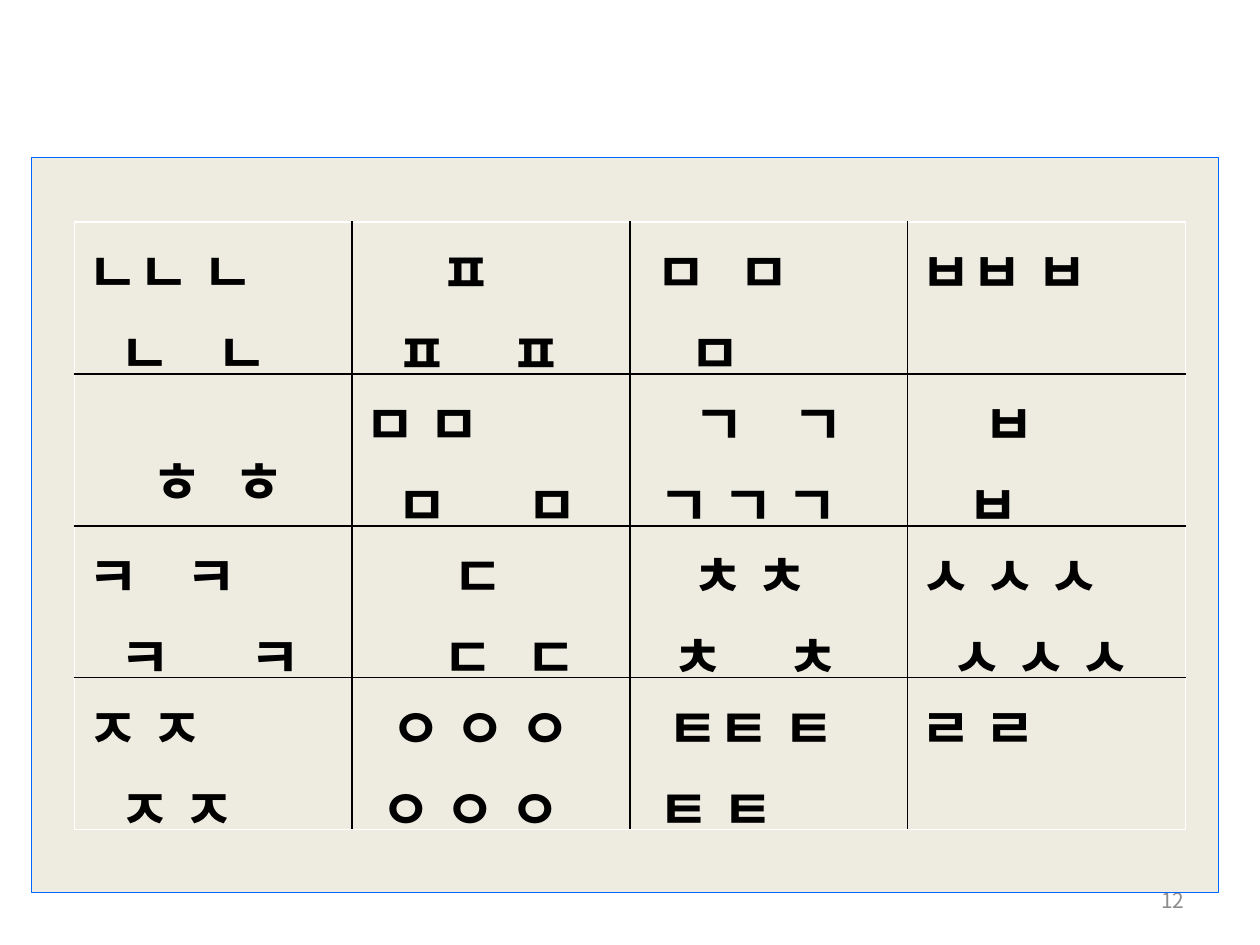
from dataclasses import dataclass

from lxml import etree
from pptx import Presentation
from pptx.dml.color import RGBColor
from pptx.enum.shapes import MSO_SHAPE
from pptx.enum.text import MSO_ANCHOR, PP_ALIGN
from pptx.oxml.ns import qn
from pptx.util import Cm, Pt

RECTANGLE = MSO_SHAPE.RECTANGLE
MIDDLE, TOP, BOTTOM = MSO_ANCHOR.MIDDLE, MSO_ANCHOR.TOP, MSO_ANCHOR.BOTTOM
RIGHT = PP_ALIGN.RIGHT

FONT = "Noto Sans CJK KR"
COLORS = {"panel": "EEECE1", "outline": "0066FF", "text": "000000",
          "grid": "000000", "number": "8C8C8C"}
COLUMN_WIDTH, ROW_HEIGHT = Cm(5.6), Cm(3.06)


@dataclass
class Line:
    """Letters on one line; each tab goes to the next stop (cm)."""
    text: str
    stops: tuple[float, ...] = ()


@dataclass
class LetterCell:
    lines: list[Line]
    anchor: MSO_ANCHOR = TOP


LETTERS = [
    [
        LetterCell([Line("ㄴㄴ ㄴ"), Line("\tㄴ\tㄴ", (0.65, 2.62))]),
        LetterCell([Line("\tㅍ", (1.53,)), Line("\tㅍ\tㅍ", (0.65, 2.94))]),
        LetterCell([Line("\tㅁ\tㅁ", (0.26, 1.94)), Line("\tㅁ", (0.95,))]),
        LetterCell([Line("ㅂㅂ ㅂ")]),
    ],
    [
        LetterCell([Line("\tㅎ\tㅎ", (1.29, 2.96))], BOTTOM),
        LetterCell([Line("ㅁ ㅁ"), Line("\tㅁ\tㅁ", (0.65, 3.27))]),
        LetterCell([Line("\tㄱ\tㄱ", (1.03, 3.02)), Line("\tㄱ ㄱ ㄱ", (0.32,))]),
        LetterCell([Line("\tㅂ", (1.27,)), Line("\tㅂ", (0.95,))]),
    ],
    [
        LetterCell([Line("ㅋ\tㅋ", (1.99,)), Line("\tㅋ\tㅋ", (0.65, 3.27))]),
        LetterCell([Line("\tㄷ", (1.77,)), Line("\tㄷ\tㄷ", (1.57, 3.24))]),
        LetterCell([Line("\tㅊ ㅊ", (1.01,)), Line("\tㅊ\tㅊ", (0.6, 2.92))]),
        LetterCell([Line("ㅅ ㅅ ㅅ"), Line("\tㅅ ㅅ ㅅ", (0.63,))]),
    ],
    [
        LetterCell([Line("ㅈ ㅈ"), Line("\tㅈ ㅈ", (0.65,))]),
        LetterCell([Line("\tㅇ ㅇ ㅇ", (0.52,)), Line("\tㅇ ㅇ ㅇ", (0.32,))]),
        LetterCell([Line("\tㅌㅌ ㅌ", (0.5,)), Line("\tㅌ ㅌ", (0.32,))]),
        LetterCell([Line("ㄹ ㄹ")]),
    ],
]


def color(name: str) -> RGBColor:
    return RGBColor.from_string(COLORS[name])


def style_font(paragraph, size: int, color_name: str, bold: bool = False) -> None:
    font = paragraph.font
    font.name, font.size, font.bold = FONT, Pt(size), bold
    font.color.rgb = color(color_name)
    for run in paragraph.runs:
        east_asian = etree.SubElement(run._r.get_or_add_rPr(), qn("a:ea"))
        east_asian.set("typeface", FONT)


def add_tab_stops(paragraph, stops: tuple[float, ...]) -> None:
    properties = paragraph._p.get_or_add_pPr()
    tab_list = etree.Element(qn("a:tabLst"))
    for stop in stops:
        etree.SubElement(tab_list, qn("a:tab"), pos=str(Cm(stop)), algn="l")
    properties.insert(0, tab_list)


def add_border(cell, side: str) -> None:
    border = etree.SubElement(cell._tc.get_or_add_tcPr(), qn(f"a:{side}"), w=str(Pt(1)))
    fill = etree.SubElement(border, qn("a:solidFill"))
    etree.SubElement(fill, qn("a:srgbClr"), val=COLORS["grid"])


def fill_cell(cell, content: LetterCell, sides: list[str]) -> None:
    cell.vertical_anchor = content.anchor
    for side in sides:
        add_border(cell, side)
    cell.fill.background()
    frame = cell.text_frame
    for index, line in enumerate(content.lines):
        paragraph = frame.add_paragraph() if index else frame.paragraphs[0]
        paragraph.text = line.text
        style_font(paragraph, 32, "text", bold=True)
        if line.stops:
            add_tab_stops(paragraph, line.stops)


def add_letter_table(slide) -> None:
    rows, columns = len(LETTERS), len(LETTERS[0])
    table = slide.shapes.add_table(rows, columns, Cm(1.5), Cm(4.48),
                                   COLUMN_WIDTH * columns, ROW_HEIGHT * rows).table
    table.first_row = table.horz_banding = False
    for column in table.columns:
        column.width = COLUMN_WIDTH
    for row_index, row in enumerate(LETTERS):
        table.rows[row_index].height = ROW_HEIGHT
        for column_index, content in enumerate(row):
            # Only the inner grid lines are drawn
            inner = {"lnL": column_index > 0, "lnR": column_index < columns - 1,
                     "lnT": row_index > 0, "lnB": row_index < rows - 1}
            fill_cell(table.cell(row_index, column_index), content,
                      [side for side, shown in inner.items() if shown])


def add_panel(slide) -> None:
    panel = slide.shapes.add_shape(RECTANGLE, Cm(0.64), Cm(3.18), Cm(23.92), Cm(14.82))
    panel.shadow.inherit = False
    panel.fill.solid()
    panel.fill.fore_color.rgb = color("panel")
    panel.line.color.rgb = color("outline")
    panel.line.width = Pt(0.75)


def add_slide_number(slide) -> None:
    box = slide.shapes.add_textbox(Cm(18.2), Cm(17.65), Cm(5.93), Cm(1.01))
    frame = box.text_frame
    frame.word_wrap = True
    frame.vertical_anchor = MIDDLE
    paragraph = frame.paragraphs[0]
    paragraph.text = "12"
    paragraph.alignment = RIGHT
    style_font(paragraph, 12, "number")


def main() -> None:
    presentation = Presentation()
    presentation.slide_width, presentation.slide_height = Cm(25.4), Cm(19.05)
    slide = presentation.slides.add_slide(presentation.slide_layouts[6])
    add_slide_number(slide)
    add_panel(slide)
    add_letter_table(slide)
    presentation.save("out.pptx")


if __name__ == "__main__":
    main()
